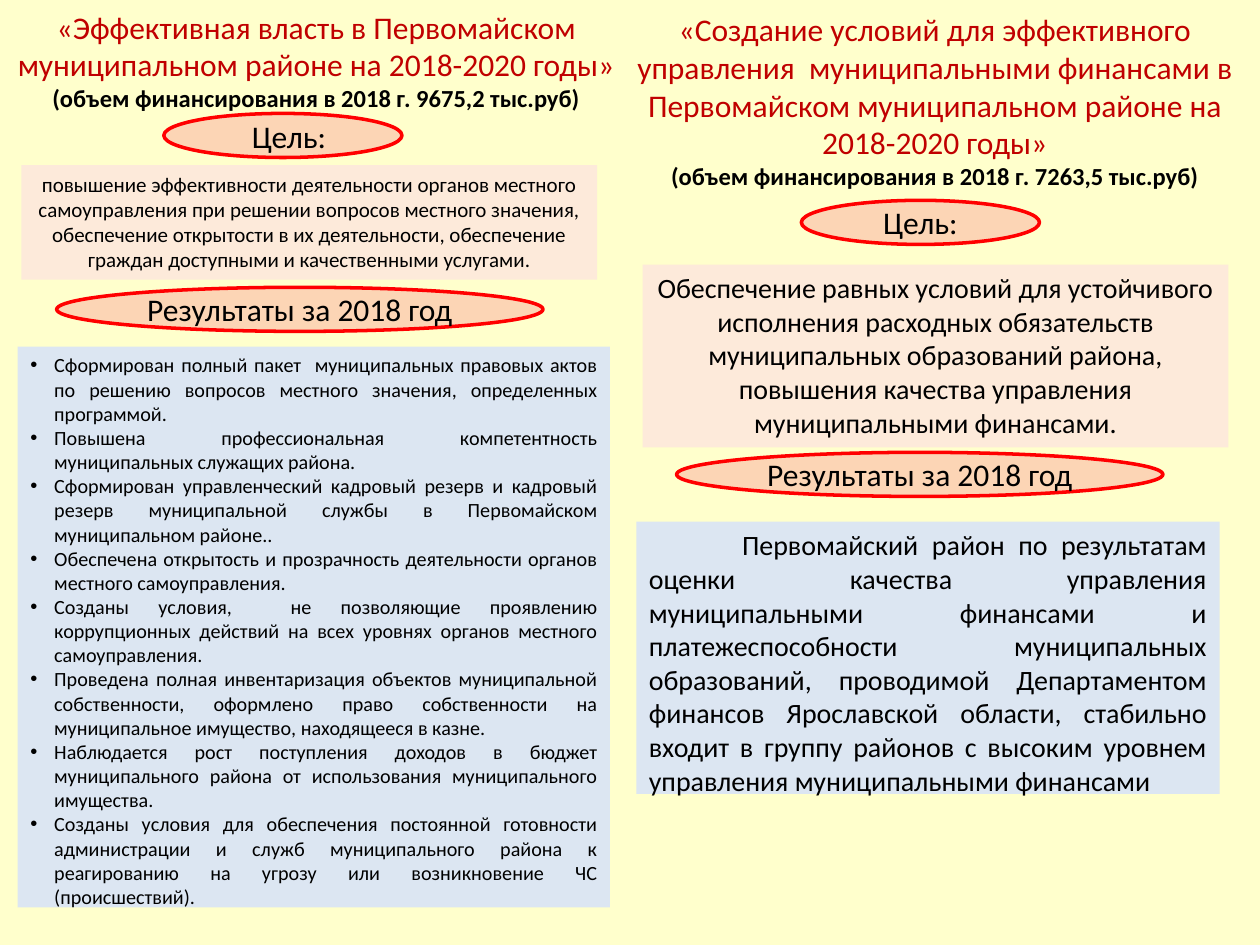
from lxml import etree
from pptx import Presentation
from pptx.dml.color import RGBColor
from pptx.enum import shapes, text
from pptx.oxml import ns
from pptx.util import Inches, Pt

COLORS = {"background": "FFFFCC", "heading": "C00000", "text": "000000",
          "goal": "FDEADA", "results": "DCE6F2", "oval": "FCD5B5",
          "oval_line": "FF0000"}
FONT = "Calibri"
OVAL_HEIGHT = 0.35
CENTER, JUSTIFY = text.PP_ALIGN.CENTER, text.PP_ALIGN.JUSTIFY

PROGRAMS = [
    {
        "heading": "«Эффективная власть в Первомайском муниципальном районе на 2018-2020 годы»",
        "funding": "(объем финансирования в 2018 г. 9675,2 тыс.руб)",
        "goal": "повышение эффективности деятельности органов местного самоуправления при решении вопросов местного значения, обеспечение открытости в их деятельности, обеспечение граждан доступными и качественными услугами.",
        "results": [
            "Сформирован полный пакет  муниципальных правовых актов по решению вопросов местного значения, определенных программой.",
            "Повышена профессиональная компетентность муниципальных служащих района.",
            "Сформирован управленческий кадровый резерв и кадровый резерв муниципальной службы в Первомайском муниципальном районе..",
            "Обеспечена открытость и прозрачность деятельности органов местного самоуправления.",
            "Созданы условия,  не позволяющие проявлению коррупционных действий на всех уровнях органов местного самоуправления.",
            "Проведена полная инвентаризация объектов муниципальной собственности, оформлено право собственности на муниципальное имущество, находящееся в казне.",
            "Наблюдается рост поступления доходов в бюджет муниципального района от использования муниципального имущества.",
            "Созданы условия для обеспечения постоянной готовности администрации и служб муниципального района к реагированию на угрозу или возникновение ЧС (происшествий).",
        ],
        "holders": (0, 2),
        "heading_box": (0.01, 0.01, 5, 0.94),
        "goal_oval": (1.3, 0.9, 1.89, OVAL_HEIGHT),
        "goal_label": (1.9, 0.88, 0.8, 0.4),
        "goal_box": (0.17, 1.31, 4.57, 0.91),
        "results_oval": (0.45, 2.28, 3.86, OVAL_HEIGHT),
        "results_box": (0.14, 2.75, 4.7, 4.55),
        "goal_size": 12, "results_size": 11.5,
        "bullet": "•", "indent": (0.19, -0.19),
    },
    {
        "heading": "«Создание условий для эффективного управления  муниципальными финансами в Первомайском муниципальном районе на 2018-2020 годы»",
        "funding": "(объем финансирования в 2018 г. 7263,5 тыс.руб)",
        "goal": "Обеспечение равных условий для устойчивого исполнения расходных обязательств муниципальных образований района, повышения качества управления муниципальными финансами.",
        "results": [
            "Первомайский район по результатам оценки качества управления муниципальными финансами и платежеспособности муниципальных образований, проводимой Департаментом финансов Ярославской области, стабильно входит в группу районов с высоким уровнем управления муниципальными финансами",
        ],
        "holders": (3, 4),
        "heading_box": (4.92, 0.03, 5, 1.55),
        "goal_oval": (6.36, 1.59, 1.89, OVAL_HEIGHT),
        "goal_label": None,
        "goal_box": (5.1, 2.1, 4.65, 1.45),
        "results_oval": (5.37, 3.59, 3.86, OVAL_HEIGHT),
        "results_box": (5.05, 4.14, 4.63, 2.26),
        "goal_size": 16, "results_size": 16,
        "bullet": None, "indent": (0, 0.74),
    },
]


def rgb(name):
    return RGBColor.from_string(COLORS[name])


def apply(obj, **values):
    for name, value in values.items():
        setattr(obj, name, value)


def place(sp, box):
    apply(sp, **dict(zip(("left", "top", "width", "height"), map(Inches, box))))


def fill(sp, color):
    sp.fill.solid()
    sp.fill.fore_color.rgb = rgb(color)


def frame(sp, anchor=text.MSO_ANCHOR.TOP, grow=True, wrap=True):
    tf = sp.text_frame
    size = text.MSO_AUTO_SIZE
    apply(tf, word_wrap=wrap, vertical_anchor=anchor,
          auto_size=size.SHAPE_TO_FIT_TEXT if grow else size.NONE,
          margin_left=Inches(0.1), margin_right=Inches(0.1),
          margin_top=Inches(0.05), margin_bottom=Inches(0.05))
    return tf


def write(p, words, size, align=CENTER, color="text", bold=False):
    apply(p, alignment=align, space_before=Pt(0), space_after=Pt(0))
    r = p.add_run()
    r.text = words
    apply(r.font, name=FONT, size=Pt(size), bold=bold)
    r.font.color.rgb = rgb(color)
    return r


def set_list_format(p, bullet, indent):
    pPr = p._p.get_or_add_pPr()
    for name, value in zip(("marL", "indent"), indent):
        pPr.set(name, str(Inches(value)))
    if bullet:
        etree.SubElement(pPr, ns.qn("a:buFont"), typeface="Arial")
        etree.SubElement(pPr, ns.qn("a:buChar"), char=bullet)
    else:
        etree.SubElement(pPr, ns.qn("a:buNone"))


def outline(r, color):
    rPr = r._r.get_or_add_rPr()
    ln = etree.Element(ns.qn("a:ln"), w=str(Pt(0.75)))
    solid = etree.SubElement(ln, ns.qn("a:solidFill"))
    etree.SubElement(solid, ns.qn("a:srgbClr"), val=COLORS[color])
    rPr.insert(0, ln)


def add_heading(sp, box, heading, funding):
    place(sp, box)
    tf = frame(sp)
    p = tf.paragraphs[0]
    outline(write(p, heading, 18, color="heading"), "heading")
    set_list_format(p, None, (0, 0))
    p = tf.add_paragraph()
    write(p, funding, 14, bold=True)
    set_list_format(p, None, (0, 0))


def add_oval(s, box, label=None):
    sp = s.shapes.add_shape(shapes.MSO_SHAPE.OVAL, *map(Inches, box))
    sp.shadow.inherit = False
    fill(sp, "oval")
    sp.line.color.rgb = rgb("oval_line")
    sp.line.width = Pt(2)
    if label:
        tf = frame(sp, text.MSO_ANCHOR.MIDDLE, grow=False)
        write(tf.paragraphs[0], label, 18)


def add_label(s, box, label):
    sp = s.shapes.add_textbox(*map(Inches, box))
    write(frame(sp, wrap=False).paragraphs[0], label, 18, text.PP_ALIGN.LEFT)


def add_goal(s, box, goal, size):
    sp = s.shapes.add_shape(shapes.MSO_SHAPE.RECTANGLE, *map(Inches, box))
    sp.shadow.inherit = False
    fill(sp, "goal")
    sp.line.fill.background()
    write(frame(sp).paragraphs[0], goal, size)


def add_results(sp, box, items, size, bullet, indent):
    place(sp, box)
    fill(sp, "results")
    tf = frame(sp)
    for i, item in enumerate(items):
        p = tf.add_paragraph() if i else tf.paragraphs[0]
        write(p, item, size, JUSTIFY)
        set_list_format(p, bullet, indent)


def add_program(s, holders, prog):
    heading, results = (holders[i] for i in prog["holders"])
    add_heading(heading, prog["heading_box"], prog["heading"], prog["funding"])
    add_goal(s, prog["goal_box"], prog["goal"], prog["goal_size"])
    if prog["goal_label"]:
        add_oval(s, prog["goal_oval"])
        add_label(s, prog["goal_label"], "Цель:")
    else:
        add_oval(s, prog["goal_oval"], "Цель:")
    add_results(results, prog["results_box"], prog["results"],
                prog["results_size"], prog["bullet"], prog["indent"])
    add_oval(s, prog["results_oval"], "Результаты за 2018 год")


def main():
    prs = Presentation()
    apply(prs, slide_width=Inches(10), slide_height=Inches(7.5))
    s = prs.slides.add_slide(prs.slide_layouts.get_by_name("Comparison"))
    fill(s.background, "background")
    holders = {sp.placeholder_format.idx: sp for sp in s.placeholders}
    for prog in PROGRAMS:
        add_program(s, holders, prog)
    unused = holders[1]._element
    unused.getparent().remove(unused)
    prs.save("out.pptx")


if __name__ == "__main__":
    main()
